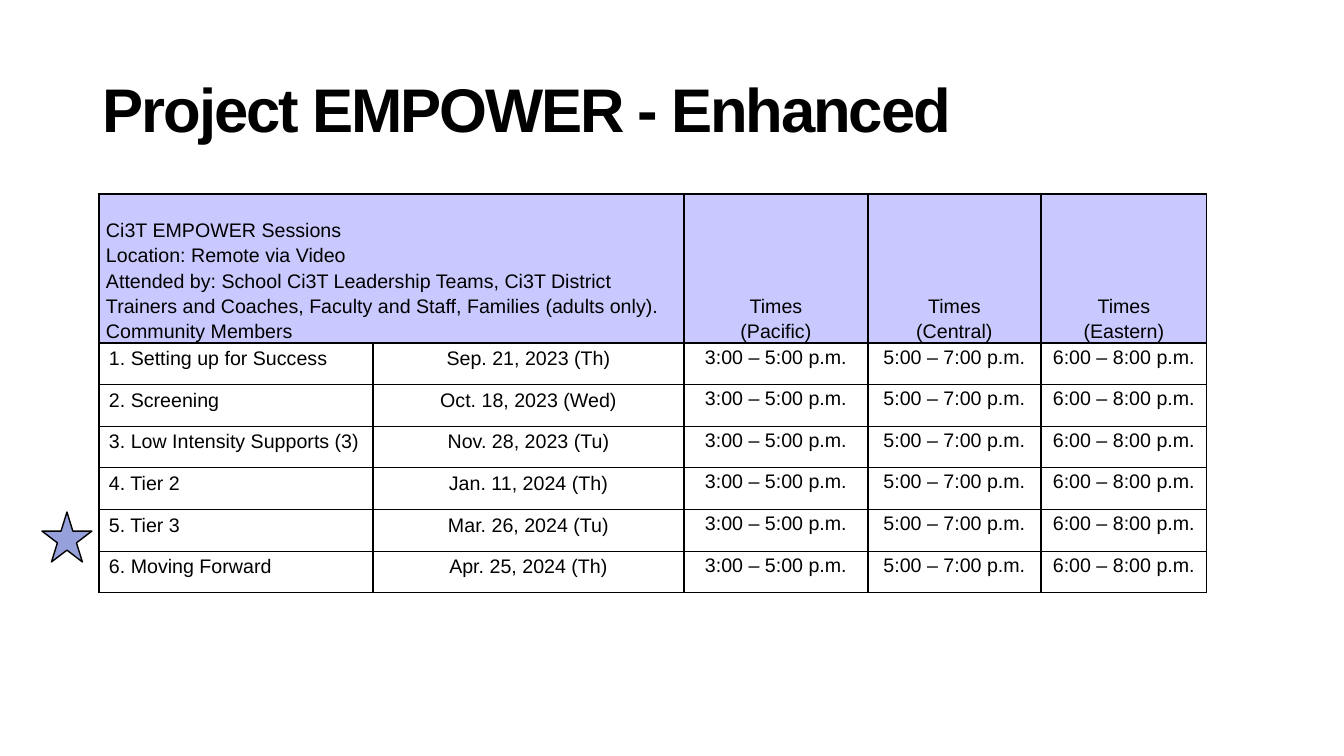
from dataclasses import dataclass

from lxml.etree import SubElement
from pptx import Presentation
from pptx.dml.color import RGBColor
from pptx.enum.shapes import MSO_SHAPE as Shape
from pptx.enum.text import MSO_ANCHOR as Anchor, PP_ALIGN as Align
from pptx.oxml.ns import qn
from pptx.slide import Slide
from pptx.table import _Cell as Cell
from pptx.text.text import _Paragraph as Paragraph
from pptx.util import Emu, Pt

EMU_PER_PX = 914400 / 100.8
FONT = "Arial"
BLACK = "000000"
LAVENDER = "C9C9FF"
PERIWINKLE = "96A0DB"

TABLE_LEFT, TABLE_TOP = 99, 194
COLUMN_WIDTHS = [274, 311, 184, 173, 166]
HEADER_HEIGHT, BODY_HEIGHT = 149, 250


@dataclass(frozen=True)
class CellStyle:
    align: Align = Align.LEFT
    anchor: Anchor = Anchor.TOP
    margin_x: int = 10
    margin_y: int = 5
    line_spacing: float = 1.0
    fill: str | None = None


@dataclass(frozen=True)
class Session:
    name: str
    date: str


HEADING = CellStyle(anchor=Anchor.BOTTOM, margin_x=7, margin_y=0, line_spacing=1.15, fill=LAVENDER)
ZONE = CellStyle(Align.CENTER, Anchor.BOTTOM, 7, 0, 1.15, LAVENDER)
NAME = CellStyle()
DATE = CellStyle(align=Align.CENTER)
TIME = CellStyle(Align.CENTER, margin_x=7, margin_y=0, line_spacing=1.15)

HEADING_LINES = [
    "Ci3T EMPOWER Sessions",
    "Location: Remote via Video",
    "Attended by: School Ci3T Leadership Teams, Ci3T District Trainers and Coaches, "
    "Faculty and Staff, Families (adults only). Community Members",
]
TIMES_BY_ZONE = {
    "Pacific": "3:00 – 5:00 p.m.",
    "Central": "5:00 – 7:00 p.m.",
    "Eastern": "6:00 – 8:00 p.m.",
}
SESSIONS = [
    Session("1. Setting up for Success", "Sep. 21, 2023 (Th)"),
    Session("2. Screening", "Oct. 18, 2023 (Wed)"),
    Session("3. Low Intensity Supports (3)", "Nov. 28, 2023 (Tu)"),
    Session("4. Tier 2", "Jan. 11, 2024 (Th)"),
    Session("5. Tier 3", "Mar. 26, 2024 (Tu)"),
    Session("6. Moving Forward", "Apr. 25, 2024 (Th)"),
]


def px(length: int) -> Emu:
    return Emu(round(length * EMU_PER_PX))


def color(value: str) -> RGBColor:
    return RGBColor.from_string(value)


def set_font(paragraph: Paragraph, size: int, bold: bool = False) -> None:
    font = paragraph.font
    font.name = FONT
    font.size = Pt(size)
    font.bold = bold
    font.color.rgb = color(BLACK)


def add_borders(cell: Cell) -> None:
    """Draw a 1 pt black line on all four sides; borders must precede the fill."""
    properties = cell._tc.get_or_add_tcPr()
    for side in ("lnL", "lnR", "lnT", "lnB"):
        line = SubElement(properties, qn(f"a:{side}"), w=str(Pt(1)))
        fill = SubElement(line, qn("a:solidFill"))
        SubElement(fill, qn("a:srgbClr"), val=BLACK)


def fill_cell(cell: Cell, lines: list[str], style: CellStyle) -> None:
    add_borders(cell)
    if style.fill:
        cell.fill.solid()
        cell.fill.fore_color.rgb = color(style.fill)
    else:
        cell.fill.background()
    cell.vertical_anchor = style.anchor
    cell.margin_left = cell.margin_right = px(style.margin_x)
    cell.margin_top = cell.margin_bottom = px(style.margin_y)
    cell.text = "\n".join(lines)
    for paragraph in cell.text_frame.paragraphs:
        paragraph.alignment = style.align
        paragraph.line_spacing = style.line_spacing
        set_font(paragraph, 14)


def add_title(slide: Slide) -> None:
    frame = slide.shapes.add_textbox(px(93), px(40), px(1159), px(146)).text_frame
    frame.word_wrap = True
    frame.vertical_anchor = Anchor.MIDDLE
    paragraph = frame.paragraphs[0]
    paragraph.text = "Project EMPOWER - Enhanced"
    paragraph.line_spacing = 0.9
    set_font(paragraph, 44, bold=True)
    paragraph._p.pPr.find(qn("a:defRPr")).set("spc", "-150")


def add_schedule(slide: Slide) -> None:
    table = slide.shapes.add_table(
        len(SESSIONS) + 1, len(COLUMN_WIDTHS), px(TABLE_LEFT), px(TABLE_TOP),
        px(sum(COLUMN_WIDTHS)), px(HEADER_HEIGHT + BODY_HEIGHT),
    ).table
    table.first_row = table.horz_banding = False
    for column, width in zip(table.columns, COLUMN_WIDTHS):
        column.width = px(width)
    for row in table.rows:
        row.height = Emu(px(BODY_HEIGHT) // len(SESSIONS))
    table.rows[0].height = px(HEADER_HEIGHT)

    table.cell(0, 0).merge(table.cell(0, 1))
    fill_cell(table.cell(0, 0), HEADING_LINES, HEADING)
    fill_cell(table.cell(0, 1), [], HEADING)
    for column_index, (zone, time) in enumerate(TIMES_BY_ZONE.items(), start=2):
        fill_cell(table.cell(0, column_index), ["Times", f"({zone})"], ZONE)
        for row_index in range(1, len(SESSIONS) + 1):
            fill_cell(table.cell(row_index, column_index), [time], TIME)
    for row_index, session in enumerate(SESSIONS, start=1):
        fill_cell(table.cell(row_index, 0), [session.name], NAME)
        fill_cell(table.cell(row_index, 1), [session.date], DATE)


def add_star(slide: Slide) -> None:
    star = slide.shapes.add_shape(Shape.STAR_5_POINT, px(42), px(512), px(50), px(50))
    star.shadow.inherit = False
    star.fill.solid()
    star.fill.fore_color.rgb = color(PERIWINKLE)
    star.line.color.rgb = color(BLACK)
    star.line.width = Pt(1)


def main() -> None:
    presentation = Presentation()
    presentation.slide_width, presentation.slide_height = px(1344), px(756)
    slide = presentation.slides.add_slide(presentation.slide_layouts[6])
    add_title(slide)
    add_schedule(slide)
    add_star(slide)
    presentation.save("out.pptx")


if __name__ == "__main__":
    main()
